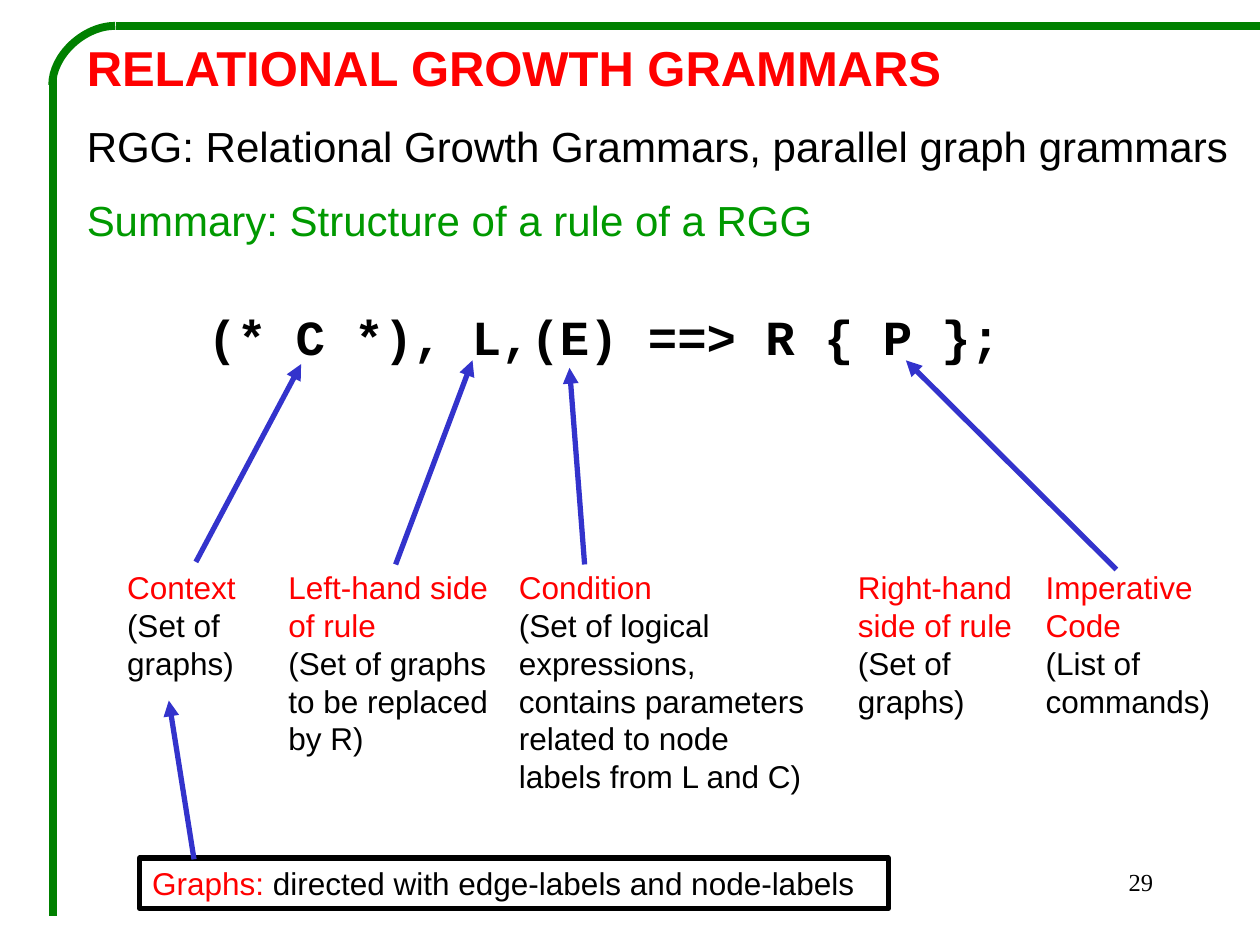
from lxml.etree import SubElement
from pptx import Presentation
from pptx.dml.color import RGBColor
from pptx.enum.shapes import MSO_CONNECTOR, MSO_SHAPE
from pptx.enum.text import MSO_ANCHOR, PP_ALIGN
from pptx.oxml.ns import qn
from pptx.util import Inches, Pt

COLORS = {
    "red": "FF0000",
    "black": "000000",
    "white": "FFFFFF",
    "heading": "009900",
    "frame": "008000",
    "arrow": "3333CC",
}

COLUMN_TOP = 4.46
COLUMNS = [
    (0.91, 1.29, 1.01, "Context", ["(Set of graphs)"]),
    (2.19, 1.83, 1.62, "Left-hand side of rule", ["(Set of graphs", "to be replaced by R)"]),
    (4.02, 2.56, 1.92, "Condition",
     ["(Set of logical expressions, contains parameters related to node labels from L and C)"]),
    (6.71, 1.44, 1.31, "Right-hand side of rule", ["(Set of graphs)"]),
    (8.2, 1.6, 1.31, "Imperative Code", ["(List of commands)"]),
]
ARROWS = [
    ((3.14, 4.48), (3.75, 2.86)),
    ((4.64, 4.48), (4.52, 2.92)),
    ((8.86, 4.52), (7.19, 2.86)),
    ((1.54, 6.82), (1.34, 5.56)),
]


def rgb(name):
    return RGBColor.from_string(COLORS[name])


def add_run(paragraph, text, size=18, font="Arial", color="black", bold=False):
    run = paragraph.add_run()
    run.text = text
    run.font.size = Pt(size)
    run.font.name = font
    run.font.color.rgb = rgb(color)
    run.font.bold = bold


def write_paragraphs(shape, paragraphs, align=PP_ALIGN.LEFT, space_before=0, inset_top=0.05):
    frame = shape.text_frame
    frame.word_wrap = True
    frame.vertical_anchor = MSO_ANCHOR.TOP
    frame.margin_top = Inches(inset_top)
    for index, runs in enumerate(paragraphs):
        paragraph = frame.add_paragraph() if index else frame.paragraphs[0]
        paragraph.alignment = align
        if index:
            paragraph.space_before = Pt(space_before)
        for text, style in runs:
            add_run(paragraph, text, **style)


def add_text(slide, box, paragraphs, **layout):
    shape = slide.shapes.add_textbox(*map(Inches, box))
    write_paragraphs(shape, paragraphs, **layout)


def add_box(slide, box, paragraphs, border=None, **layout):
    shape = slide.shapes.add_shape(MSO_SHAPE.RECTANGLE, *map(Inches, box))
    shape.shadow.inherit = False
    shape.fill.solid()
    shape.fill.fore_color.rgb = rgb("white")
    if border:
        shape.line.color.rgb = rgb(border)
        shape.line.width = Pt(3)
    else:
        shape.line.fill.background()
    write_paragraphs(shape, paragraphs, **layout)
    return shape


def add_line(slide, start, end, color, width, kind=MSO_CONNECTOR.STRAIGHT):
    connector = slide.shapes.add_connector(kind, *map(Inches, start + end))
    connector.line.color.rgb = rgb(color)
    connector.line.width = Pt(width)
    SubElement(connector._element.spPr, qn("a:effectLst"))
    return connector


def add_arrow(slide, start, end):
    connector = add_line(slide, start, end, "arrow", 3)
    SubElement(connector.line._get_or_add_ln(), qn("a:tailEnd"), type="triangle")
    return connector


def add_frame(slide):
    add_line(slide, (10, 0.21), (0.92, 0.21), "frame", 4.5)
    add_line(slide, (0.42, 0.6), (0.42, 7.27), "frame", 4.5)
    corner = add_line(slide, (0.43, 0.19), (0.9, 0.69), "frame", 4.5, MSO_CONNECTOR.CURVE)
    properties = corner._element.spPr
    properties.find(qn("a:xfrm")).set("rot", str(270 * 60000))
    properties.find(qn("a:prstGeom")).set("prst", "curvedConnector2")


def add_column(slide, left, width, height, term, details):
    paragraphs = [[(term, {"color": "red"})]] + [[(detail, {})] for detail in details]
    return add_box(slide, (left, COLUMN_TOP, width, height), paragraphs)


def main():
    presentation = Presentation()
    presentation.slide_width = Inches(10)
    presentation.slide_height = Inches(7.5)
    slide = presentation.slides.add_slide(presentation.slide_layouts[6])

    add_text(slide, (0.59, 0.21, 9.29, 1.78), [
        [("RELATIONAL GROWTH GRAMMARS", {"size": 28, "color": "red", "bold": True})],
        [("RGG: Relational Growth Grammars, parallel graph grammars", {"size": 24})],
        [("Summary: Structure of a rule of a RGG", {"size": 24, "color": "heading"})],
    ], space_before=13.5, inset_top=0.09)
    add_box(slide, (1.55, 2.29, 7.01, 0.57), [
        [("(* C *), L,(E) ==> R { P };", {"size": 28, "font": "Courier New", "bold": True})],
    ], inset_top=0.14)
    add_frame(slide)
    add_text(slide, (7.17, 6.83, 2.08, 0.5),
             [[("29", {"size": 14, "font": "Times New Roman"})]], align=PP_ALIGN.RIGHT)

    columns = [add_column(slide, *column) for column in COLUMNS]
    add_box(slide, (1.11, 6.81, 5.94, 0.4), [
        [("Graphs: ", {"color": "red"}), ("directed with edge-labels and node-labels", {})],
    ], border="black")

    context_arrow = add_arrow(slide, (1.55, COLUMN_TOP), (2.39, 2.89))
    context_arrow.begin_connect(columns[0], 0)
    for start, end in ARROWS:
        add_arrow(slide, start, end)

    presentation.save("out.pptx")


if __name__ == "__main__":
    main()
